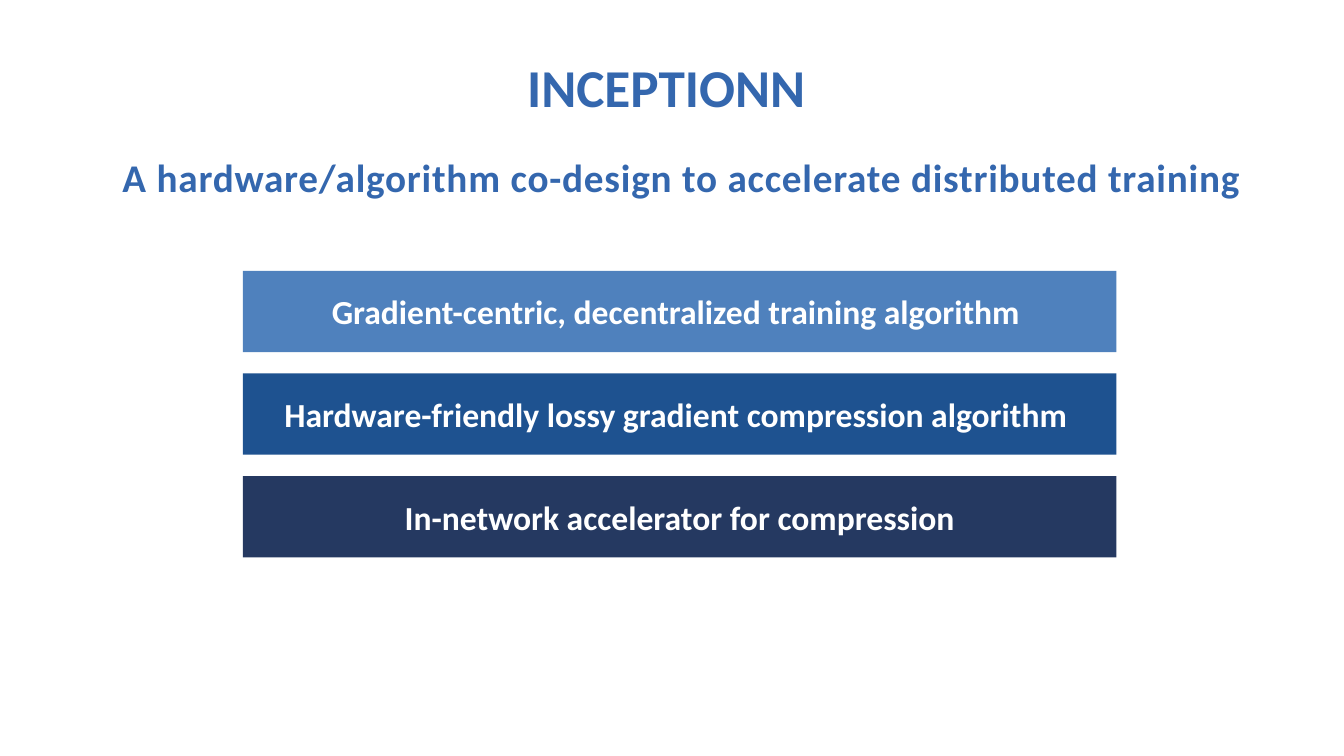
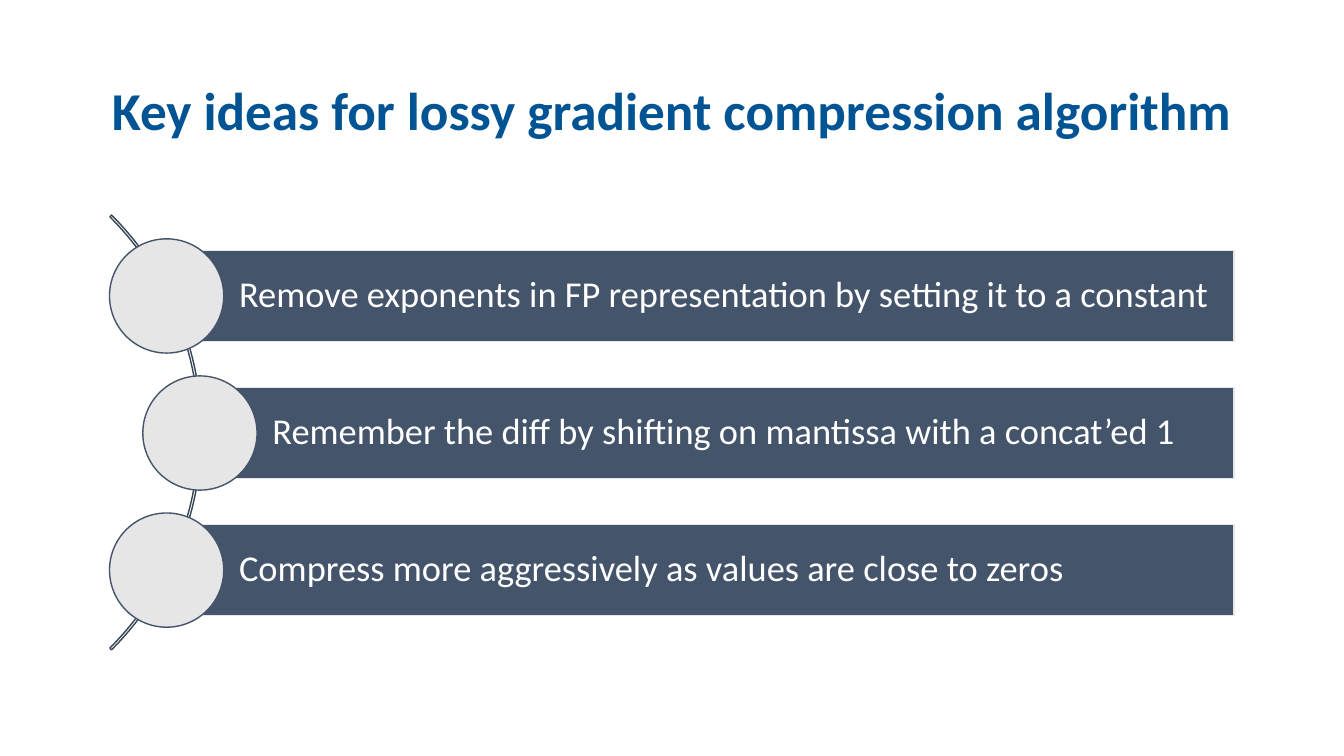
from pptx import Presentation
from pptx import util as u
from pptx.dml import color
from pptx.enum import shapes, text

Pt = u.Pt
FONT = "Calibri"
WHITE, SLATE, PALE = "FFFFFF", "44546A", "E7E6E6"
BLUE, DEEP_BLUE, ARC_LINE = "3467AE", "005493", "364355"


def rgb(value):
    return color.RGBColor.from_string(value)


class Slides:
    """Holds the shared style, the deck and the current page."""

    title_size = 38
    center = text.PP_ALIGN.CENTER
    left = text.PP_ALIGN.LEFT
    margins = (7.2, 3.6, 7.2, 3.6)

    def __init__(self):
        self.deck = Presentation()
        self.deck.slide_width, self.deck.slide_height = Pt(960), Pt(540)
        self.page = None

    def new_page(self):
        self.page = self.deck.slides.add_slide(self.deck.slide_layouts[6])

    def add_words(self, box, words, size, ink, bold=True, align=center,
                  margins=margins, line_spacing=1.0, tracking=0,
                  anchor=text.MSO_ANCHOR.MIDDLE):
        frame = box.text_frame
        frame.word_wrap = True
        frame.vertical_anchor = anchor
        (frame.margin_left, frame.margin_top,
         frame.margin_right, frame.margin_bottom) = map(Pt, margins)
        para = frame.paragraphs[0]
        para.alignment = align
        para.line_spacing = line_spacing
        span = para.add_run()
        span.text = words
        span.font.name = FONT
        span.font.size = Pt(size)
        span.font.bold = bold
        span.font.color.rgb = rgb(ink)
        if tracking:
            span._r.get_or_add_rPr().set("spc", str(round(tracking * 100)))

    def label(self, place, words, size, ink, **style):
        box = self.page.shapes.add_textbox(*map(Pt, place))
        self.add_words(box, words, size, ink, **style)

    def title(self, place, words, ink, **style):
        self.label(place, words, self.title_size, ink, **style)

    def shape(self, kind, place, fill=None, line=None):
        shape = self.page.shapes.add_shape(kind, *map(Pt, place))
        shape.shadow.inherit = False
        if fill:
            shape.fill.solid()
            shape.fill.fore_color.rgb = rgb(fill)
        else:
            shape.fill.background()
        if line:
            shape.line.color.rgb = rgb(line)
            shape.line.width = Pt(1)
        else:
            shape.line.fill.background()
        return shape

    def band(self, place, words, fill, size, line=None, **style):
        box = self.shape(shapes.MSO_SHAPE.RECTANGLE, place, fill, line)
        self.add_words(box, words, size, WHITE, **style)

    def circle(self, center_x, center_y, diameter):
        place = (center_x - diameter / 2, center_y - diameter / 2, diameter, diameter)
        self.shape(shapes.MSO_SHAPE.OVAL, place, PALE, SLATE)

    def arc(self, place, start, end, thickness):
        arc = self.shape(shapes.MSO_SHAPE.BLOCK_ARC, place, line=ARC_LINE)
        for index, value in enumerate((start * 0.6, end * 0.6, thickness)):
            arc.adjustments[index] = value


def overview_page(slides):
    slides.new_page()
    slides.title((0, 35.3, 952, 53.3), "INCEPTIONN", BLUE, anchor=text.MSO_ANCHOR.TOP)
    slides.label((87.5, 109.4, 839, 43.2),
                 "A hardware/algorithm co-design to accelerate distributed training",
                 28, BLUE, align=slides.left, margins=(0, 0, 0, 0), tracking=0.6,
                 anchor=text.MSO_ANCHOR.TOP)
    parts = (
        ("Gradient-centric, decentralized training algorithm ", "4F81BD"),
        ("Hardware-friendly lossy gradient compression algorithm ", "1E5290"),
        ("In-network accelerator for compression", "253961"),
    )
    top, pitch = 193.5, 73.3
    for row, (words, fill) in enumerate(parts):
        slides.band((173.5, top + row * pitch, 624, 58), words, fill, 24)


def key_ideas_page(slides):
    slides.new_page()
    slides.title((66, 28.8, 828, 104.4),
                 "Key ideas for lossy gradient compression algorithm",
                 DEEP_BLUE, line_spacing=0.9)
    slides.arc((-295.2, 89.3, 439.2, 439.2), 315, 45, 0.004)
    ideas = (
        (119, "Remove exponents in FP representation by setting it to a constant"),
        (142.8, "Remember the diff by shifting on mantissa with a concat’ed 1"),
        (119, "Compress more aggressively as values are close to zeros"),
    )
    top, pitch, height, right = 178.8, 97.9, 65.2, 881.5
    for row, (left, words) in enumerate(ideas):
        y = top + row * pitch
        slides.band((left, y, right - left, height), words, SLATE, 26, line=PALE,
                    bold=False, align=slides.left, margins=(51.8, 5, 5, 5),
                    line_spacing=0.9)
        slides.circle(left, y + height / 2, 81.6)


def main():
    slides = Slides()
    overview_page(slides)
    key_ideas_page(slides)
    slides.deck.save("out.pptx")


if __name__ == "__main__":
    main()
